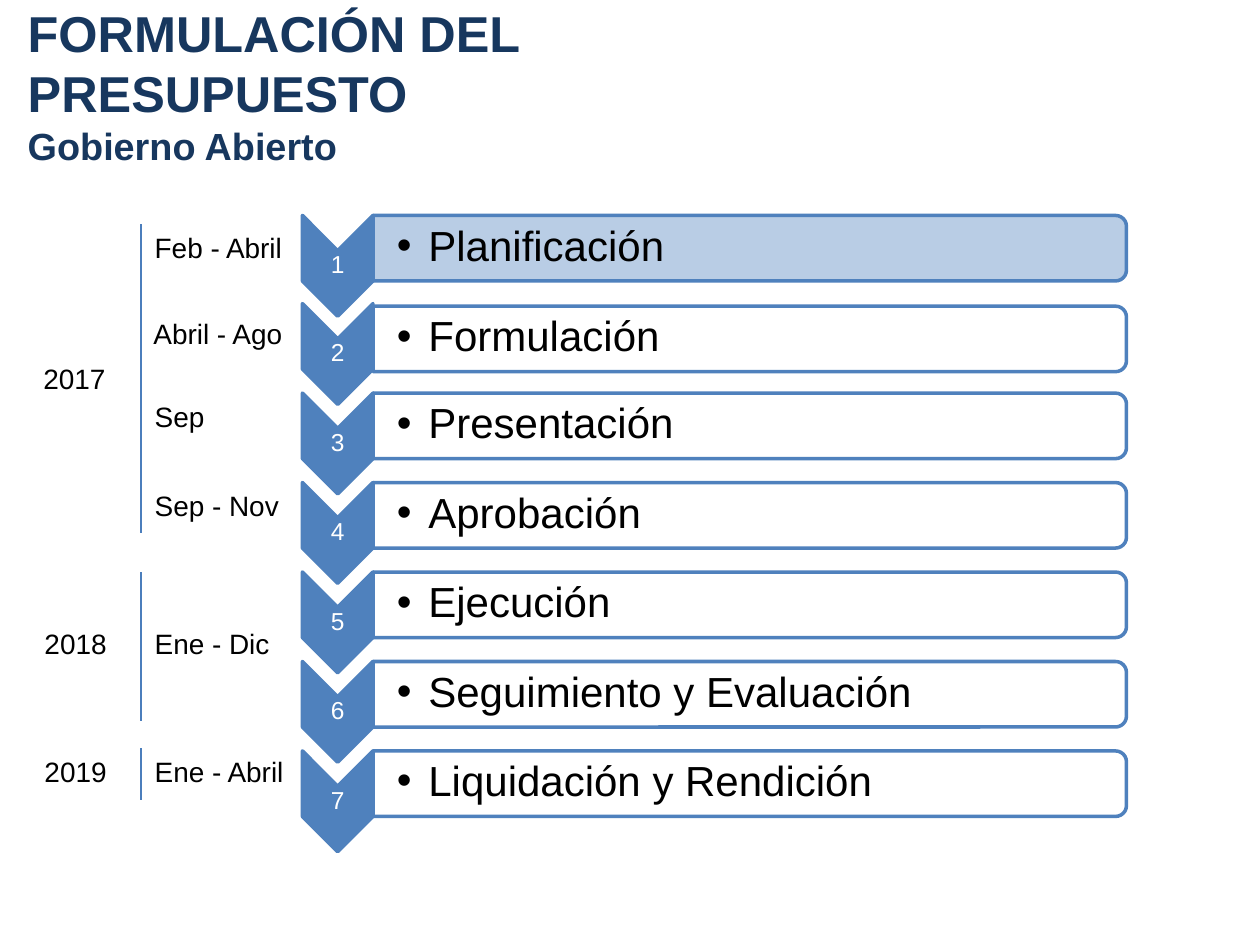
from dataclasses import dataclass

from lxml import etree
from pptx import Presentation, util as u
from pptx.dml.color import RGBColor
from pptx.enum import shapes, text
from pptx.oxml.ns import qn

PX = 9144  # EMU per px, at 100 px to the inch


@dataclass(frozen=True)
class Theme:
    font: str = "Arial"
    navy: str = "17375E"
    blue: str = "4F81BD"
    rule: str = "4B7EBC"
    highlight: str = "B9CDE5"
    white: str = "FFFFFF"
    black: str = "000000"
    title_pt: float = 28.8
    subtitle_pt: float = 21.6
    stage_pt: float = 24
    date_pt: float = 16
    number_pt: float = 14
    outline_pt: float = 2
    rule_pt: float = 0.75


@dataclass(frozen=True)
class Box:
    left: int
    top: int
    width: int
    height: int

    def emu(self) -> tuple[int, ...]:
        return tuple(v * PX for v in (self.left, self.top, self.width, self.height))


@dataclass(frozen=True)
class Stage:
    name: str
    active: bool = False
    bar_shift: int = 0


@dataclass(frozen=True)
class Period:
    label: str
    top: int
    left: int = 113


@dataclass(frozen=True)
class Year:
    label: str
    top: int
    rule_top: int
    rule_bottom: int
    left: int = 13


THEME = Theme()
STAGES = [
    Stage("Planificación", active=True),
    Stage("Formulación", bar_shift=2),
    Stage("Presentación"),
    Stage("Aprobación"),
    Stage("Ejecución"),
    Stage("Seguimiento y Evaluación"),
    Stage("Liquidación y Rendición"),
]
PERIODS = [
    Period("Feb - Abril", 178),
    Period("Abril - Ago", 246, left=112),
    Period("Sep", 312),
    Period("Sep - Nov", 383),
    Period("Ene - Dic", 492),
    Period("Ene - Abril", 594),
]
YEARS = [
    Year("2017", 282, 178, 423, left=12),
    Year("2018", 492, 454, 572),
    Year("2019", 594, 594, 635),
]
STAGES_SPAN = 425  # from the first stage to the last
RULE_X = 112


def set_all(target, values: dict) -> None:
    for name, value in values.items():
        setattr(target, name, value)


def style_font(font, size: float, color: str, bold: bool = False) -> None:
    set_all(font, {"name": THEME.font, "size": u.Pt(size), "bold": bold})
    font.color.rgb = RGBColor.from_string(color)


def add_text(slide, box: Box, words: str, size: float, color: str = THEME.black,
             align=text.PP_ALIGN.LEFT, **frame_values):
    frame = slide.shapes.add_textbox(*box.emu()).text_frame
    set_all(frame, {"word_wrap": True, **frame_values})
    paragraph = frame.paragraphs[0]
    paragraph.alignment = align
    run = paragraph.add_run()
    run.text = words
    style_font(run.font, size, color)
    return paragraph


def add_turned(slide, preset, box: Box, fill: str, opacity: int = 100) -> None:
    """Draw a preset turned 90 degrees so that it covers box as seen."""
    left = box.left + (box.width - box.height) // 2
    top = box.top + (box.height - box.width) // 2
    shape = slide.shapes.add_shape(
        preset, *Box(left, top, box.height, box.width).emu())
    shape.rotation = 90
    shape.shadow.inherit = False
    shape.fill.solid()
    shape.fill.fore_color.rgb = RGBColor.from_string(fill)
    shape.line.color.rgb = RGBColor.from_string(THEME.blue)
    shape.line.width = u.Pt(THEME.outline_pt)
    if opacity < 100:
        color = shape.fill._xPr.find(".//" + qn("a:srgbClr"))
        etree.SubElement(color, qn("a:alpha"), val=str(opacity * 1000))


def add_bullet(paragraph) -> None:
    properties = paragraph._p.get_or_add_pPr()
    properties.set("marL", str(25 * PX))
    properties.set("indent", str(-25 * PX))
    etree.SubElement(properties, qn("a:buFont"), typeface=THEME.font)
    etree.SubElement(properties, qn("a:buChar"), char="•")


def margins(left: int, others: int) -> dict:
    return {"margin_left": left * PX, "margin_top": others * PX,
            "margin_right": others * PX, "margin_bottom": others * PX,
            "vertical_anchor": text.MSO_ANCHOR.MIDDLE}


def add_stage(slide, number: int, stage: Stage, drop: int) -> None:
    add_turned(slide, shapes.MSO_SHAPE.CHEVRON, Box(240, 171 + drop, 56, 80), THEME.blue)
    label = add_text(slide, Box(240, 199 + drop, 56, 24), str(number), THEME.number_pt,
                     THEME.white, text.PP_ALIGN.CENTER, **margins(1, 1))
    label.line_spacing = 0.9

    bar_top = 171 + drop + stage.bar_shift
    add_turned(slide, shapes.MSO_SHAPE.ROUND_2_SAME_RECTANGLE, Box(296, bar_top, 598, 52),
               THEME.highlight if stage.active else THEME.white,
               100 if stage.active else 90)
    name = add_text(slide, Box(296, bar_top + 2, 595, 47), stage.name,
                    THEME.stage_pt, **margins(19, 2))
    name.line_spacing = 0.9
    add_bullet(name)


def add_rule(slide, top: int, bottom: int) -> None:
    rule = slide.shapes.add_connector(shapes.MSO_CONNECTOR.STRAIGHT, RULE_X * PX, top * PX,
                                      RULE_X * PX, bottom * PX)
    rule.line.color.rgb = RGBColor.from_string(THEME.rule)
    rule.line.width = u.Pt(THEME.rule_pt)
    etree.SubElement(rule._element.spPr, qn("a:effectLst"))


def add_title(slide) -> None:
    title = slide.shapes.title
    set_all(title, dict(zip(("left", "top", "width", "height"),
                            Box(12, 5, 535, 125).emu())))
    frame = title.text_frame
    set_all(frame, {"word_wrap": True, "auto_size": text.MSO_AUTO_SIZE.NONE,
                    "vertical_anchor": text.MSO_ANCHOR.MIDDLE})
    paragraph = frame.paragraphs[0]
    paragraph.alignment = text.PP_ALIGN.LEFT
    heading = paragraph.add_run()
    heading.text = "FORMULACIÓN DEL PRESUPUESTO"
    paragraph.add_line_break()
    subtitle = paragraph.add_run()
    subtitle.text = "Gobierno Abierto"
    style_font(heading.font, THEME.title_pt, THEME.navy, bold=True)
    style_font(subtitle.font, THEME.subtitle_pt, THEME.navy, bold=True)


def main() -> None:
    deck = Presentation()
    set_all(deck, {"slide_width": 1000 * PX, "slide_height": 750 * PX})
    slide = deck.slides.add_slide(deck.slide_layouts[5])
    add_title(slide)
    for index, stage in enumerate(STAGES):
        add_stage(slide, index + 1, stage, index * STAGES_SPAN // (len(STAGES) - 1))
    for period in PERIODS:
        add_text(slide, Box(period.left, period.top, 134, 37), period.label, THEME.date_pt)
    for year in YEARS:
        add_rule(slide, year.rule_top, year.rule_bottom)
        add_text(slide, Box(year.left, year.top, 94, 37), year.label, THEME.date_pt,
                 align=text.PP_ALIGN.CENTER)
    deck.save("out.pptx")


if __name__ == "__main__":
    main()
